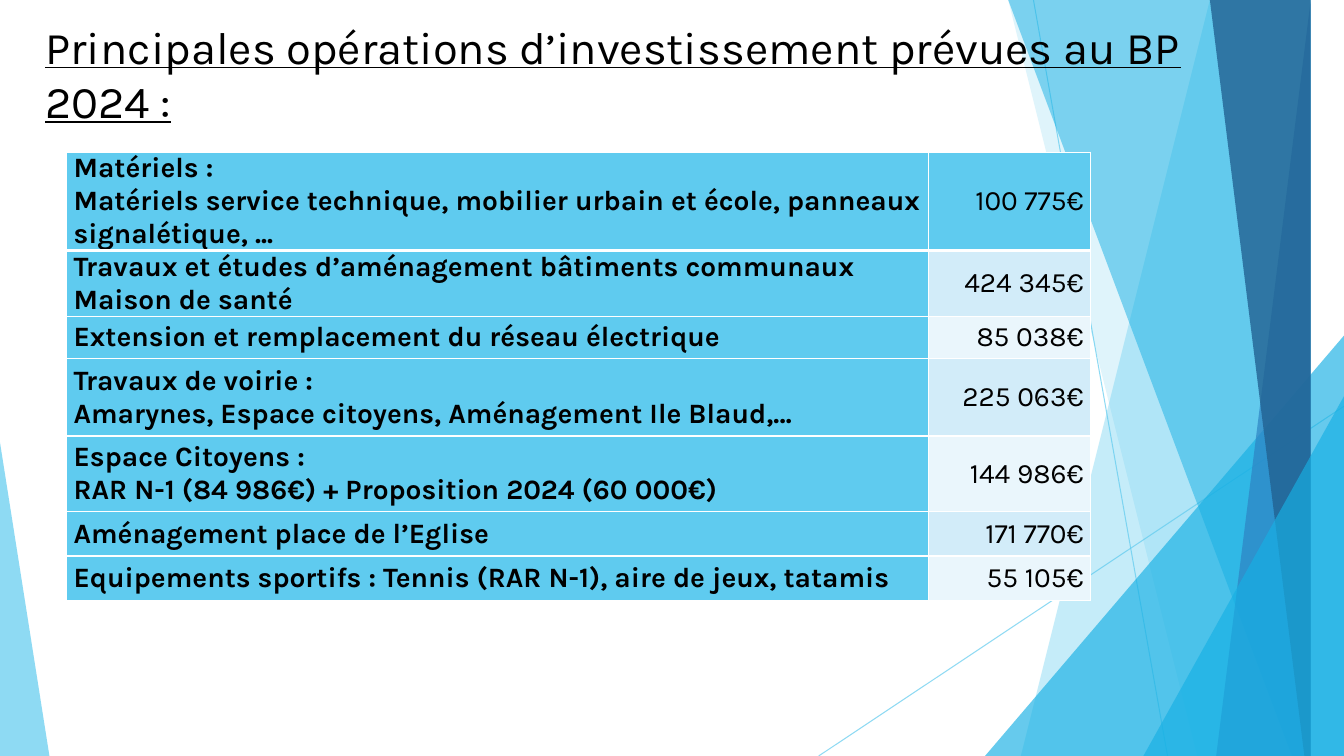
from lxml import etree
from pptx import Presentation
from pptx.dml.color import RGBColor
from pptx.enum.shapes import MSO_CONNECTOR, MSO_SHAPE
from pptx.enum.text import MSO_ANCHOR, MSO_AUTO_SIZE, PP_ALIGN
from pptx.oxml.ns import qn
from pptx.util import Inches, Pt

STRAIGHT = MSO_CONNECTOR.STRAIGHT
TRIANGLE = MSO_SHAPE.ISOSCELES_TRIANGLE
TOP, MIDDLE = MSO_ANCHOR.TOP, MSO_ANCHOR.MIDDLE
LEFT, RIGHT = PP_ALIGN.LEFT, PP_ALIGN.RIGHT
FONT = "Karla"
WIDTH, HEIGHT = 13.33, 7.5
COLORS = {
    "sky": "5FCBEF", "cyan": "17B0E4", "blue": "2E83C3", "navy": "226292",
    "band_dark": "D2ECF9", "band_light": "EAF6FC",
    "text": "000000", "border": "FFFFFF",
}


def write_text(frame, text, size=20, bold=False, underline=False, align=LEFT, anchor=MIDDLE):
    frame.text = text
    frame.word_wrap = True
    frame.vertical_anchor = anchor
    for paragraph in frame.paragraphs:
        paragraph.alignment = align
        for run in paragraph.runs:
            font = run.font
            font.name, font.size = FONT, Pt(size)
            font.bold, font.underline = bold, underline
            font.color.rgb = RGBColor.from_string(COLORS["text"])


def set_opacity(shape, percent):
    for color in shape.element.spPr.iter(qn("a:srgbClr")):
        etree.SubElement(color, qn("a:alpha"), val=str(percent * 1000))


prs = Presentation()
prs.slide_width, prs.slide_height = Inches(WIDTH), Inches(HEIGHT)
slide = prs.slides.add_slide(prs.slide_layouts[5])
shapes = slide.shapes

# Thin background lines
for ends in [(10.25, 0, 11.58, HEIGHT), (WIDTH, 4.03, 8.12, HEIGHT)]:
    ray = shapes.add_connector(STRAIGHT, *[Inches(value) for value in ends])
    ray.line.color.rgb = RGBColor.from_string(COLORS["sky"])
    ray.line.width = Pt(0.75)
    etree.SubElement(ray.element.spPr, qn("a:effectLst"))
    set_opacity(ray, 70)

# Translucent facets: panels run to the right edge (top x, bottom x),
# triangles give left, top, width, height and apex position
facets = [
    ((12.28, 10.04), "sky", 36),
    ((10.5, 11.83), "sky", 20),
    ((9.77, 3.33, 3.56, 4.17, 1), "cyan", 66),
    ((10.21, 12.91), "cyan", 50),
    ((13.03, 11.92), "blue", 70),
    ((11.96, 13.18), "navy", 80),
    ((11.34, 3.93, 1.99, 3.57, 1), "cyan", 66),
    ((0, 4.39, 0.49, 3.11, 0), "sky", 70),
]
for geometry, color, opacity in facets:
    if len(geometry) == 2:
        top_x, bottom_x = geometry
        outline = shapes.build_freeform(top_x, 0, scale=Inches(1))
        outline.add_line_segments([(WIDTH, 0), (WIDTH, HEIGHT), (bottom_x, HEIGHT)])
        facet = outline.convert_to_shape()
    else:
        *box, apex = geometry
        facet = shapes.add_shape(TRIANGLE, *[Inches(value) for value in box])
        facet.adjustments[0] = apex
    facet.shadow.inherit = False
    facet.line.fill.background()
    facet.fill.solid()
    facet.fill.fore_color.rgb = RGBColor.from_string(COLORS[color])
    set_opacity(facet, opacity)

# Title, brought in front of the facets
heading = shapes.title
heading.left, heading.top = Inches(0.35), Inches(0.14)
heading.width, heading.height = Inches(12.74), Inches(0.94)
write_text(heading.text_frame, "Principales opérations d’investissement prévues au BP 2024 :",
           size=32.4, underline=True, anchor=TOP)
heading.text_frame.auto_size = MSO_AUTO_SIZE.NONE
heading.element.getparent().append(heading.element)

# Investment table: description, amount, row height
operations = [
    ("Matériels :\nMatériels service technique, mobilier urbain et école, "
     "panneaux signalétique, ...", "100 775€", 0.8),
    ("Travaux et études d’aménagement bâtiments communaux Maison de santé", "424 345€", 0.44),
    ("Extension et remplacement du réseau électrique", "85 038€", 0.42),
    ("Travaux de voirie :\nAmarynes, Espace citoyens, Aménagement Ile Blaud,…", "225 063€", 0.77),
    ("Espace Citoyens :\nRAR N-1 (84 986€) + Proposition 2024 (60 000€)", "144 986€", 0.75),
    ("Aménagement place de l’Eglise", "171 770€", 0.44),
    ("Equipements sportifs : Tennis (RAR N-1), aire de jeux, tatamis", "55 105€", 0.44),
]
budget = shapes.add_table(len(operations), 2, Inches(0.66), Inches(1.51),
                          Inches(10.16), Inches(4.48)).table
budget.columns[0].width, budget.columns[1].width = Inches(8.55), Inches(1.61)

for index, (description, amount, height) in enumerate(operations):
    budget.rows[index].height = Inches(height)
    band = "sky" if index == 0 else "band_dark" if index % 2 else "band_light"
    entries = [(description, True, LEFT, "sky"), (amount, False, RIGHT, band)]
    for column, (text, bold, align, color) in enumerate(entries):
        cell = budget.cell(index, column)
        write_text(cell.text_frame, text, bold=bold, align=align)
        cell.vertical_anchor = MIDDLE
        cell.margin_left = cell.margin_right = Inches(0.07)
        cell.margin_top = cell.margin_bottom = 0
        cell.fill.solid()
        cell.fill.fore_color.rgb = RGBColor.from_string(COLORS[color])

        # White borders, thicker between the first two rows
        properties = cell.fill.fore_color and cell._tc.get_or_add_tcPr()
        for position, side in enumerate(["lnL", "lnR", "lnT", "lnB"]):
            thick = (index, side) in [(0, "lnB"), (1, "lnT")]
            border = etree.Element(qn(f"a:{side}"), w=str(Pt(3 if thick else 1)))
            solid = etree.SubElement(border, qn("a:solidFill"))
            etree.SubElement(solid, qn("a:srgbClr"), val=COLORS["border"])
            properties.insert(position, border)

prs.save("out.pptx")
